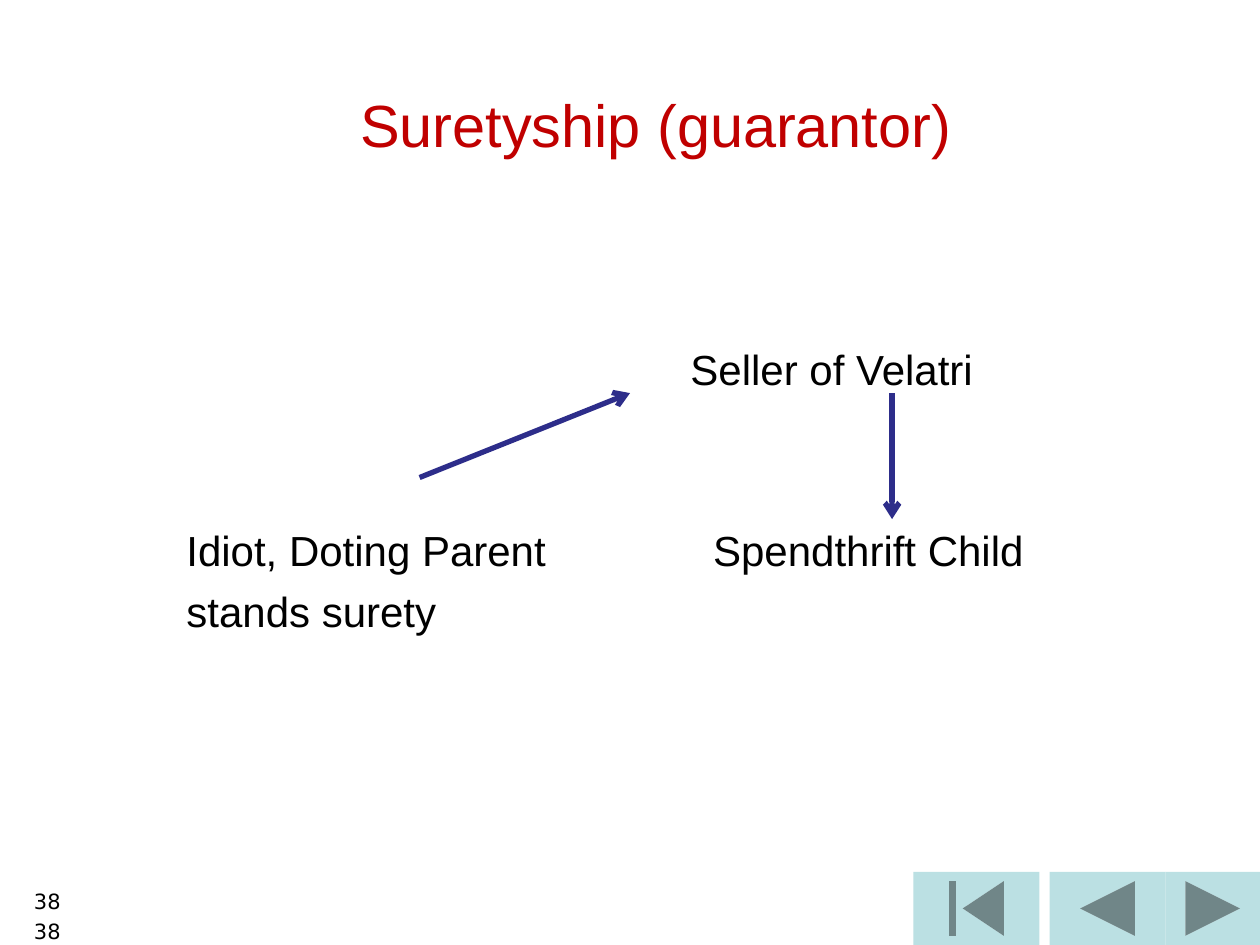
from pptx import Presentation
from pptx.dml.color import RGBColor
from pptx.enum.shapes import MSO_CONNECTOR, MSO_SHAPE
from pptx.enum.text import MSO_ANCHOR, PP_ALIGN
from pptx.oxml.ns import qn
from pptx.util import Inches, Pt
from lxml import etree

STRAIGHT = MSO_CONNECTOR.STRAIGHT
TOP, MIDDLE = MSO_ANCHOR.TOP, MSO_ANCHOR.MIDDLE
LEFT, CENTER, RIGHT = PP_ALIGN.LEFT, PP_ALIGN.CENTER, PP_ALIGN.RIGHT
FIRST = MSO_SHAPE.ACTION_BUTTON_BEGINNING
PREVIOUS = MSO_SHAPE.ACTION_BUTTON_BACK_OR_PREVIOUS
NEXT = MSO_SHAPE.ACTION_BUTTON_FORWARD_OR_NEXT

COLORS = {"title": "C00000", "text": "000000", "arrow": "2D2D8A", "button": "BBE0E3"}


def rgb(name):
    return RGBColor.from_string(COLORS[name])


def add_text(slide, box, text, size, color="text", font="Arial",
             align=LEFT, anchor=TOP, margin=None):
    frame = slide.shapes.add_textbox(*map(Inches, box)).text_frame
    frame.word_wrap = True
    frame.vertical_anchor = anchor
    if margin is not None:
        frame.margin_left = frame.margin_right = Inches(margin)
        frame.margin_top = frame.margin_bottom = Inches(margin)
    frame.text = text
    for index, paragraph in enumerate(frame.paragraphs):
        paragraph.alignment = align
        if index:
            paragraph.space_before = Pt(6)
        for run in paragraph.runs:
            run.font.size = Pt(size)
            run.font.name = font
            run.font.color.rgb = rgb(color)


def add_arrow(slide, start, end):
    arrow = slide.shapes.add_connector(STRAIGHT, *map(Inches, (*start, *end)))
    arrow.line.color.rgb = rgb("arrow")
    arrow.line.width = Pt(3)
    etree.SubElement(arrow.line._get_or_add_ln(), qn("a:tailEnd"), type="arrow")
    etree.SubElement(arrow._element.spPr, qn("a:effectLst"))


def add_navigation(slide, left, top, height):
    for offset, width, kind in ((0, 1, FIRST), (1.08, 0.92, PREVIOUS), (2, 0.75, NEXT)):
        button = slide.shapes.add_shape(
            kind, *map(Inches, (left + offset, top, width, height)))
        button.shadow.inherit = False
        button.fill.solid()
        button.fill.fore_color.rgb = rgb("button")
        button.line.fill.background()


def add_suretyship_diagram(slide, left, top):
    # Parties
    parties = (
        (5.48, 0.81, 3, "Seller of Velatri"),
        (1.48, 2.24, 3.5, "Idiot, Doting Parent\nstands surety"),
        (5.66, 2.24, 3, "Spendthrift Child"),
    )
    for x, y, width, party in parties:
        height = 0.4 + 0.47 * party.count("\n")
        add_text(slide, (left + x, top + y, width, height), party, 24, margin=0)

    # Seller to child, parent to seller
    for (x1, y1), (x2, y2) in (((7.08, 1.2), (7.08, 2.2)), ((3.33, 1.87), (5, 1.2))):
        add_arrow(slide, (left + x1, top + y1), (left + x2, top + y2))


def add_page_numbers(slide, left, width):
    for top in (7, 7.24):
        add_text(slide, (left, top, width, 0.26), "38", 12, font="DejaVu Sans", align=RIGHT)


def main():
    prs = Presentation()
    prs.slide_width, prs.slide_height = Inches(10), Inches(7.5)
    slide = prs.slides.add_slide(prs.slide_layouts[6])

    add_navigation(slide, 7.25, 6.92, 0.58)
    add_text(slide, (0.83, 0.32, 8.75, 1.33), "Suretyship (guarantor)", 34,
             color="title", align=CENTER, anchor=MIDDLE)
    add_suretyship_diagram(slide, 0, 1.92)
    add_page_numbers(slide, 0, 0.58)

    prs.save("out.pptx")


if __name__ == "__main__":
    main()
